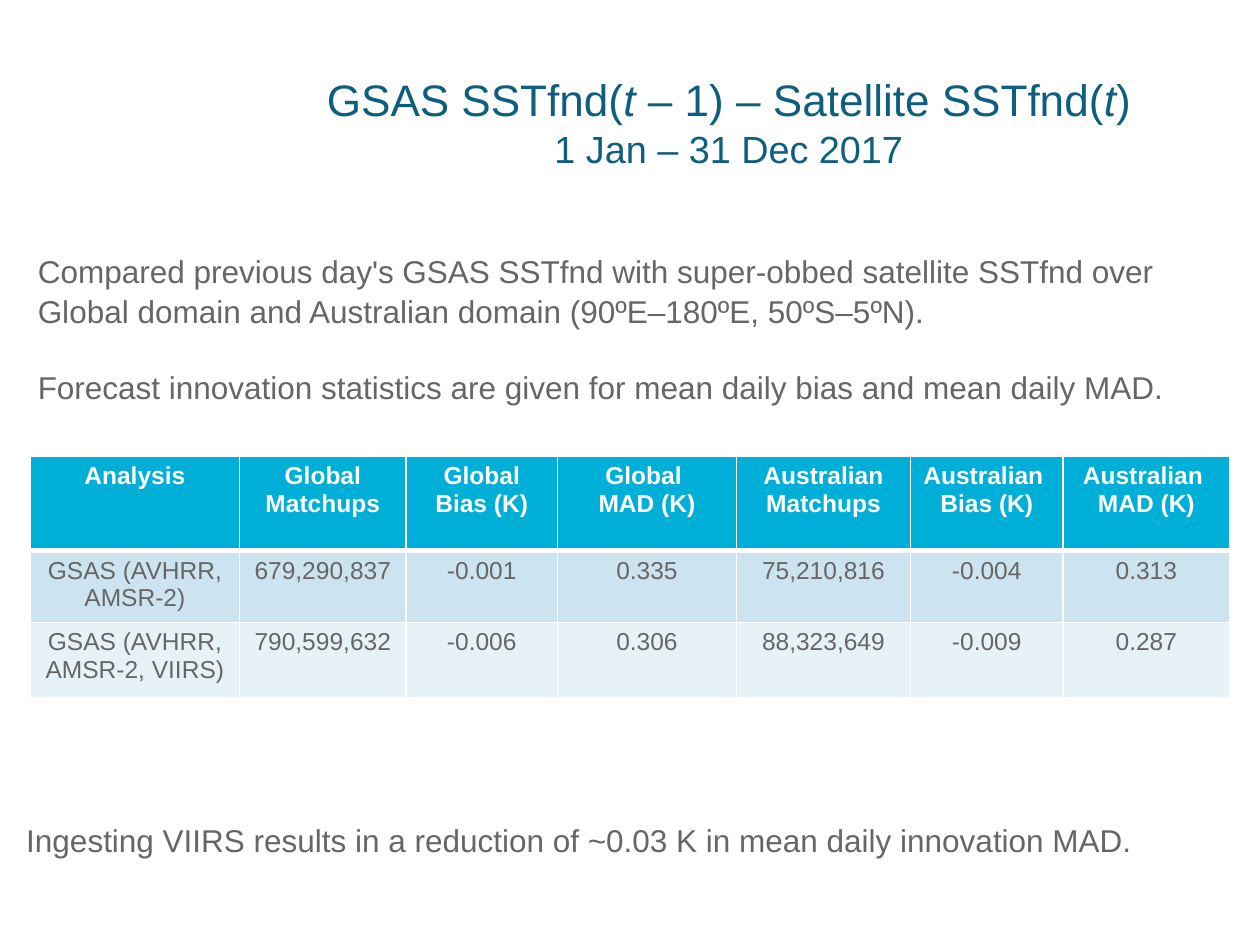
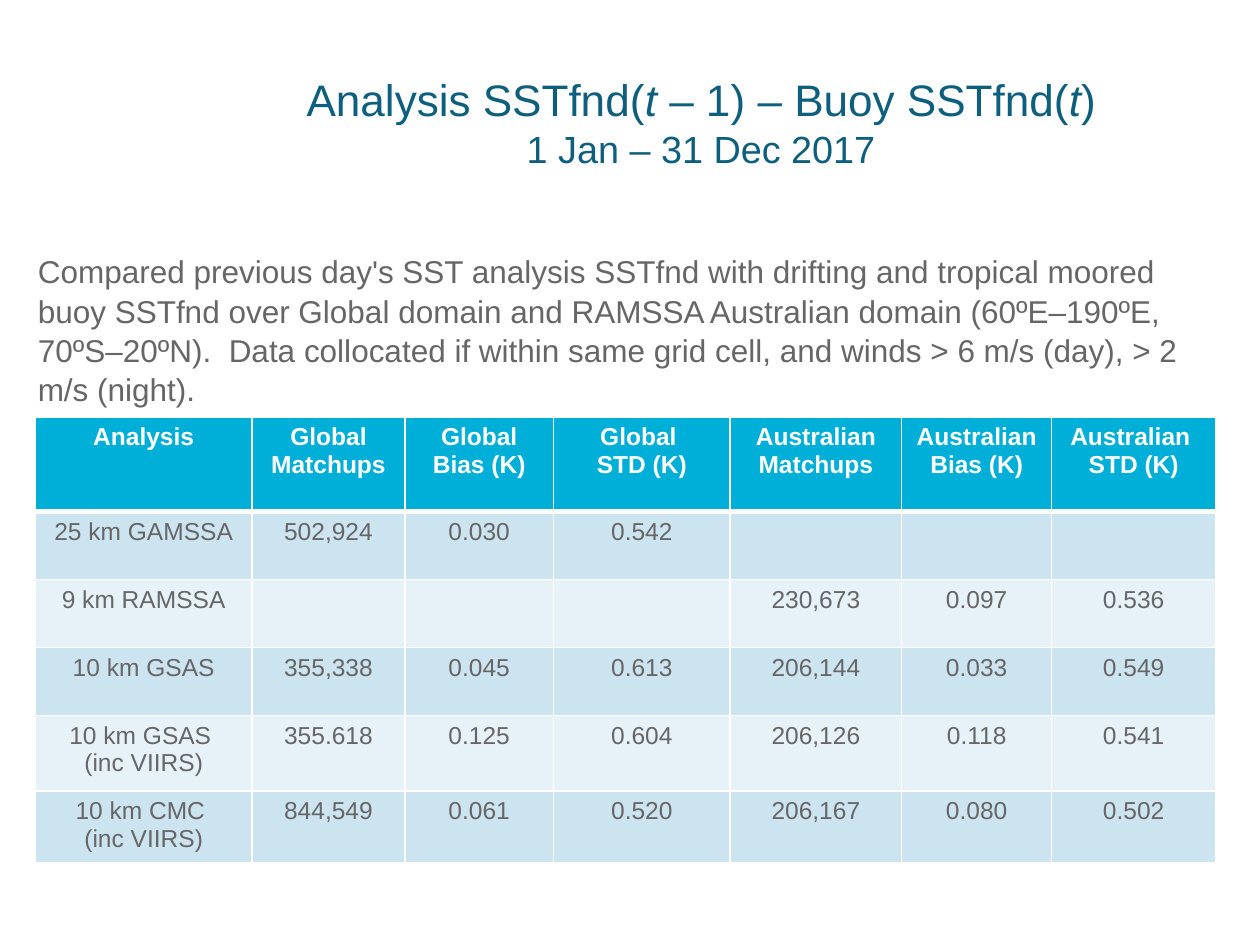
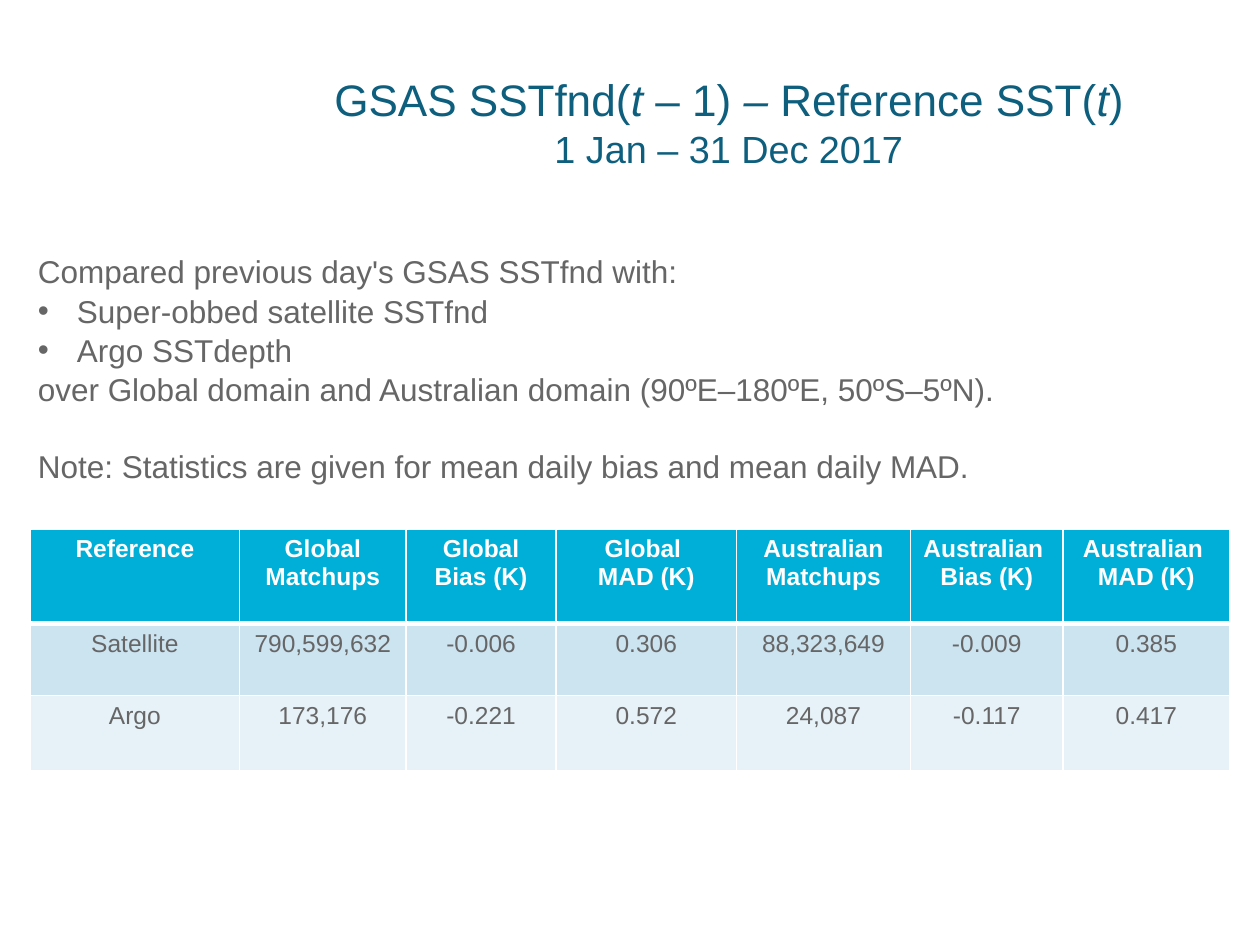
from lxml import etree
from pptx import Presentation
from pptx.dml.color import RGBColor
from pptx.enum.text import MSO_ANCHOR, MSO_AUTO_SIZE, PP_ALIGN
from pptx.oxml.ns import qn
from pptx.util import Inches, Pt

CENTER = PP_ALIGN.CENTER
LEFT = PP_ALIGN.LEFT
MIDDLE = MSO_ANCHOR.MIDDLE
NO_AUTOFIT = MSO_AUTO_SIZE.NONE

TITLE_BLUE = RGBColor(0x0E, 0x5F, 0x7E)
TEXT_GREY = RGBColor(0x66, 0x66, 0x66)
HEADER_BLUE = RGBColor(0x00, 0xAF, 0xD7)
BAND_FILLS = (RGBColor(0xCC, 0xE3, 0xF0), RGBColor(0xE7, 0xF2, 0xF8))
WHITE = RGBColor(0xFF, 0xFF, 0xFF)

FONT = "Arial"
BODY_SIZE = 18
BODY_LINE_SPACING = 1.04
BULLET_INDENT = Inches(0.31)

SLIDE_WIDTH, SLIDE_HEIGHT = Inches(10), Inches(7.5)
COLUMN = SLIDE_WIDTH // 100
ROW = SLIDE_HEIGHT // 75

# Boxes are left, top, width, height in grid columns and rows.
TITLE_BOX = (19.3, 5.3, 77.1, 8.7)
NARROW_TITLE_BOX = (19.3, 5.3, 72.7, 8.7)
BODY_BOX = (2, 19.4, 94.5, 42)
PERIOD = "1 Jan – 31 Dec 2017"


def place(box):
    left, top, width, height = box
    return [int(length) for length in
            (left * COLUMN, top * ROW, width * COLUMN, height * ROW)]


def move(shape, box):
    shape.left, shape.top, shape.width, shape.height = place(box)


def set_font(font, size, color, bold=False):
    font.name, font.size, font.bold = FONT, Pt(size), bold
    font.color.rgb = color


def fill_title(title, box, analysis, reference):
    move(title, box)
    frame = title.text_frame
    frame.auto_size = NO_AUTOFIT
    frame.vertical_anchor = MIDDLE
    paragraph = frame.paragraphs[0]
    paragraph.alignment = CENTER
    pieces = [(f"{analysis} SSTfnd(", False), ("t", True), (" – 1) ", False),
              ("–", True), (f" {reference}(", False), ("t", True), (")", False)]
    for text, italic in pieces:
        run = paragraph.add_run()
        run.text = text
        set_font(run.font, 25.2, TITLE_BLUE)
        run.font.italic = italic
    paragraph.add_line_break()
    period = paragraph.add_run()
    period.text = PERIOD
    set_font(period.font, 21.6, TITLE_BLUE)


def set_bullet(paragraph, bulleted):
    properties = paragraph._p.get_or_add_pPr()
    indent = BULLET_INDENT if bulleted else 0
    properties.set("marL", str(indent))
    properties.set("indent", str(-indent))
    if bulleted:
        etree.SubElement(properties, qn("a:buChar"), char="•")
    else:
        etree.SubElement(properties, qn("a:buNone"))


def fill_body(body, box, lines):
    """Write lines of (text, bulleted, lines of space before)."""
    move(body, box)
    frame = body.text_frame
    frame.auto_size = NO_AUTOFIT
    for index, (text, bulleted, gap) in enumerate(lines):
        paragraph = frame.add_paragraph() if index else frame.paragraphs[0]
        paragraph.text = text
        set_bullet(paragraph, bulleted)
        paragraph.alignment = LEFT
        paragraph.line_spacing = BODY_LINE_SPACING
        paragraph.space_before = Pt(gap * 21.5)
        set_font(paragraph.font, BODY_SIZE, TEXT_GREY)


def set_borders(cell, bottom_width, top_width):
    properties = cell._tc.get_or_add_tcPr()
    widths = {"lnL": 1, "lnR": 1, "lnT": top_width, "lnB": bottom_width}
    for side, width in widths.items():
        line = etree.SubElement(properties, qn(f"a:{side}"), w=str(Pt(width)))
        fill = etree.SubElement(line, qn("a:solidFill"))
        etree.SubElement(fill, qn("a:srgbClr"), val=str(WHITE))


def format_cell(cell, row_index):
    is_header = row_index == 0
    set_borders(cell, 3 if is_header else 1, 3 if row_index == 1 else 1)
    cell.fill.solid()
    cell.fill.fore_color.rgb = HEADER_BLUE if is_header else BAND_FILLS[(row_index - 1) % 2]
    for paragraph in cell.text_frame.paragraphs:
        paragraph.alignment = CENTER
        set_font(paragraph.font, 14, WHITE if is_header else TEXT_GREY, is_header)


def header_row(subject, spread):
    return (subject, "Global\nMatchups", "Global\nBias (K)", f"Global \n{spread} (K)",
            "Australian Matchups", "Australian \nBias (K)", f"Australian \n{spread} (K)")


def add_statistics_table(slide, box, column_weights, row_weights, rows):
    """Share the box among columns and rows by their weights."""
    left, top, width, height = place(box)
    table = slide.shapes.add_table(len(rows), len(rows[0]), left, top, width, height).table
    for column, weight in zip(table.columns, column_weights):
        column.width = int(width * weight / sum(column_weights))
    for row, weight in zip(table.rows, row_weights):
        row.height = int(height * weight / sum(row_weights))
    for row_index, values in enumerate(rows):
        for column_index, value in enumerate(values):
            cell = table.cell(row_index, column_index)
            cell.text = value
            format_cell(cell, row_index)


def add_conclusion(slide, box, text):
    frame = slide.shapes.add_textbox(*place(box)).text_frame
    frame.word_wrap = False
    paragraph = frame.paragraphs[0]
    paragraph.text = text
    set_font(paragraph.font, BODY_SIZE, TEXT_GREY)


def add_comparison_slide(presentation, title_box, analysis, reference, lines):
    slide = presentation.slides.add_slide(presentation.slide_layouts[1])
    fill_title(slide.shapes.title, title_box, analysis, reference)
    fill_body(slide.placeholders[1], BODY_BOX, lines)
    return slide


def add_satellite_slide(presentation):
    slide = add_comparison_slide(presentation, TITLE_BOX, "GSAS", "Satellite SSTfnd", [
        ("Compared previous day's GSAS SSTfnd with super-obbed satellite SSTfnd over "
         "Global domain and Australian domain (90ºE–180ºE, 50ºS–5ºN).", False, 0),
        ("Forecast innovation statistics are given for mean daily bias and "
         "mean daily MAD.", False, 1),
    ])
    add_statistics_table(
        slide, (2.4, 36.2, 95.2, 19.2),
        (1.66, 1.32, 1.2, 1.42, 1.38, 1.21, 1.32), (0.75, 0.57, 0.6), [
            header_row("Analysis", "MAD"),
            ("GSAS (AVHRR, AMSR-2)", "679,290,837", "-0.001", "0.335",
             "75,210,816", "-0.004", "0.313"),
            ("GSAS (AVHRR, AMSR-2, VIIRS)", "790,599,632", "-0.006", "0.306",
             "88,323,649", "-0.009", "0.287"),
        ])
    add_conclusion(slide, (1.1, 64.7, 90.5, 4),
                   "Ingesting VIIRS results in a reduction of ~0.03 K in mean daily innovation MAD.")


def add_buoy_slide(presentation):
    slide = add_comparison_slide(presentation, NARROW_TITLE_BOX, "Analysis", "Buoy SSTfnd", [
        ("Compared previous day's SST analysis SSTfnd with drifting and tropical moored "
         "buoy SSTfnd over Global domain and RAMSSA Australian domain (60ºE–190ºE, "
         "70ºS–20ºN).  Data collocated if within same grid cell, and winds > 6 m/s (day), "
         "> 2 m/s (night).", False, 0),
    ])
    add_statistics_table(
        slide, (2.8, 33.1, 93.7, 35.4),
        (1.72, 1.21, 1.18, 1.4, 1.36, 1.19, 1.3), (0.75, 0.54, 0.54, 0.54, 0.6, 0.57), [
            header_row("Analysis", "STD"),
            ("25 km GAMSSA", "502,924", "0.030", "0.542", "", "", ""),
            ("9 km RAMSSA", "", "", "", "230,673", "0.097", "0.536"),
            ("10 km GSAS", "355,338", "0.045", "0.613", "206,144", "0.033", "0.549"),
            ("10 km GSAS \n(inc VIIRS)", "355.618", "0.125", "0.604",
             "206,126", "0.118", "0.541"),
            ("10 km CMC \n(inc VIIRS)", "844,549", "0.061", "0.520",
             "206,167", "0.080", "0.502"),
        ])


def add_reference_slide(presentation):
    slide = add_comparison_slide(presentation, TITLE_BOX, "GSAS", "Reference SST", [
        ("Compared previous day's GSAS SSTfnd with:", False, 0),
        ("Super-obbed satellite SSTfnd", True, 0),
        ("Argo SSTdepth", True, 0),
        ("over Global domain and Australian domain (90ºE–180ºE, 50ºS–5ºN).", False, 0),
        ("Note: Statistics are given for mean daily bias and mean daily MAD.", False, 1),
    ])
    add_statistics_table(
        slide, (2.4, 42, 95.2, 19.2),
        (1.66, 1.32, 1.19, 1.43, 1.38, 1.21, 1.32), (0.75, 0.57, 0.6), [
            header_row("Reference", "MAD"),
            ("Satellite", "790,599,632", "-0.006", "0.306", "88,323,649", "-0.009", "0.385"),
            ("Argo", "173,176", "-0.221", "0.572", "24,087", "-0.117", "0.417"),
        ])


def main():
    presentation = Presentation()
    presentation.slide_width, presentation.slide_height = SLIDE_WIDTH, SLIDE_HEIGHT
    add_satellite_slide(presentation)
    add_buoy_slide(presentation)
    add_reference_slide(presentation)
    presentation.save("out.pptx")


if __name__ == "__main__":
    main()
